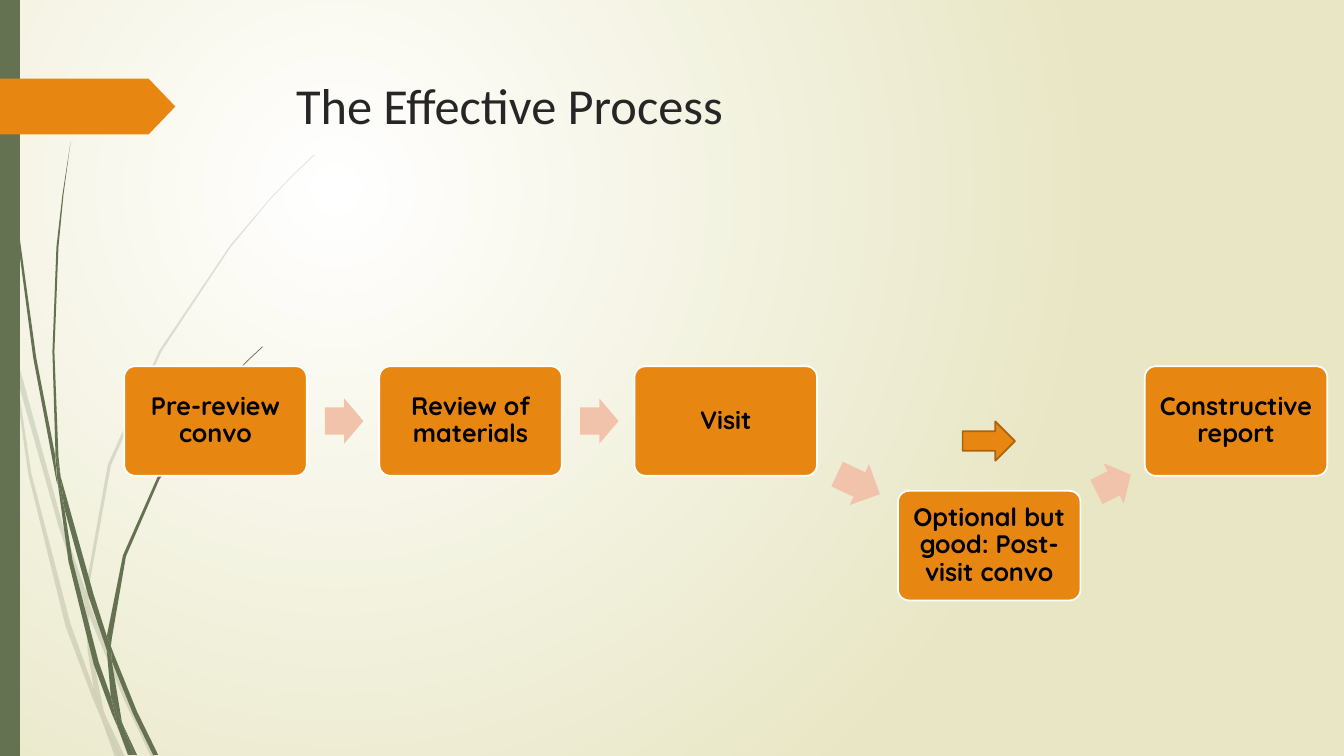
from lxml.etree import SubElement
from pptx import Presentation
from pptx.dml.color import RGBColor
from pptx.enum.shapes import MSO_SHAPE
from pptx.enum.text import MSO_ANCHOR, MSO_AUTO_SIZE, PP_ALIGN
from pptx.oxml.ns import qn
from pptx.util import Cm, Pt

ORANGE, PEACH, OLIVE, WHITE = "E78712", "F1C3AB", "647252", "FFFFFF"
GRASS_UNIT = Cm(2.54) / 100

FADED_BLADES = [
    [(11, 350), (9, 322), (0, 282), (0, 299), (10, 344)],
    [(58, 522), (84, 599), (85, 586), (62, 520), (14, 345), (17, 376)],
    [(92, 607), (88, 596), (88, 610), (123, 694), (150, 751), (155, 751), (127, 692)],
    [(119, 751), (124, 751), (105, 711)],
    [(93, 683), (70, 619), (31, 469), (17, 376), (11, 350), (28, 470), (65, 621),
     (92, 693), (101, 714), (99, 707)],
    [(84, 599), (87, 646), (93, 683), (96, 692), (105, 711), (103, 706), (91, 646),
     (88, 610), (88, 608)],
    [(88, 584), (110, 462), (160, 349), (229, 245), (268, 198), (290, 175), (312, 154),
     (312, 153), (289, 175), (268, 197), (228, 244), (158, 348), (107, 461), (85, 584),
     (85, 586), (88, 596)],
    [(101, 714), (114, 751), (119, 751)],
    [(88, 608), (88, 610), (88, 596), (85, 586), (84, 599)],
    [(96, 692), (93, 683), (99, 707), (101, 714), (119, 751), (105, 711)],
]
SOLID_BLADES = [
    [(7, 110), (17, 233), (33, 355), (56, 477), (57, 481), (55, 457), (55, 453),
     (36, 355), (19, 232), (8, 109), (5, 48), (4, 0), (3, 0), (4, 48)],
    [(88, 592), (106, 645), (106, 633), (106, 631), (93, 590), (60, 472), (64, 505)],
    [(113, 649), (110, 641), (111, 656), (132, 708), (152, 749), (157, 749), (136, 706)],
    [(110, 691), (98, 657), (72, 556), (64, 505), (57, 477), (68, 557), (93, 659),
     (111, 708), (117, 722), (116, 717)],
    [(60, 472), (58, 453), (54, 349), (58, 245), (63, 193), (70, 141), (62, 193),
     (56, 245), (52, 349), (55, 449)],
    [(133, 749), (136, 749), (122, 719)],
    [(57, 477), (64, 505), (60, 472), (55, 449), (55, 453)],
    [(111, 633), (125, 552), (158, 476), (205, 406), (231, 374), (245, 359), (261, 344),
     (260, 344), (245, 358), (231, 373), (204, 405), (156, 474), (122, 551), (106, 631),
     (110, 641)],
    [(117, 722), (127, 749), (131, 749)],
    [(106, 645), (110, 691), (116, 706), (122, 719), (121, 716), (111, 656), (109, 651)],
    [(106, 645), (109, 651), (111, 656), (110, 641), (106, 631), (106, 633)],
    [(116, 706), (110, 691), (116, 717), (117, 722), (130, 749), (133, 749), (122, 719)],
]


def color(hex_code):
    """Turn a hex string into a colour."""
    return RGBColor.from_string(hex_code)


def paint(shape, fill, line=None, opacity=None):
    """Give a shape its fill, outline and opacity, without a shadow."""
    shape.shadow.inherit = False
    shape.fill.solid()
    shape.fill.fore_color.rgb = color(fill)
    if line:
        shape.line.color.rgb = color(line)
        shape.line.width = Pt(1.25)
    else:
        shape.line.fill.background()
    if opacity:
        srgb = shape.element.spPr.find(".//" + qn("a:srgbClr"))
        SubElement(srgb, qn("a:alpha")).set("val", str(opacity * 1000))
    return shape


def preset(slide, kind, box, fill, line=None, adjustments=(), rotation=0):
    """Add a painted preset shape in a box given in centimetres."""
    shape = slide.shapes.add_shape(kind, *map(Cm, box))
    for index, value in enumerate(adjustments):
        shape.adjustments[index] = value
    shape.rotation = rotation
    return paint(shape, fill, line)


def write(shape, text, *, font, size, ink, bold=False, align=PP_ALIGN.LEFT,
          anchor=MSO_ANCHOR.TOP, spacing=1.0, inset=0.25):
    """Put formatted text into a shape."""
    frame = shape.text_frame
    frame.text = text
    frame.word_wrap = True
    frame.auto_size = MSO_AUTO_SIZE.NONE
    frame.vertical_anchor = anchor
    frame.margin_left = frame.margin_right = Cm(inset)
    frame.margin_top = frame.margin_bottom = Cm(0.13)
    paragraph = frame.paragraphs[0]
    paragraph.alignment = align
    paragraph.line_spacing = spacing
    run_font = paragraph.runs[0].font
    run_font.name, run_font.size, run_font.bold = font, Pt(size), bold
    run_font.color.rgb = color(ink)


def draw_blades(slide, blades, opacity=None):
    """Draw grass blades from outlines given in grass units."""
    for start, *others in blades:
        builder = slide.shapes.build_freeform(*start, scale=GRASS_UNIT)
        builder.add_line_segments(others, close=True)
        paint(builder.convert_to_shape(), OLIVE, opacity=opacity)


def draw_backdrop(slide):
    """Draw the radial background, the grass, the side bar and the flag."""
    fill = slide.background.fill
    fill.gradient()
    for stop, shade in zip(fill.gradient_stops, (WHITE, "E8E6C4")):
        stop.color.rgb = color(shade)
    gradient = slide.element.find(".//" + qn("a:gradFill"))
    gradient.remove(gradient.find(qn("a:lin")))
    radial = SubElement(gradient, qn("a:path"), {"path": "circle"})
    SubElement(radial, qn("a:fillToRect"),
               {"l": "50000", "t": "50000", "r": "100000", "b": "100000"})
    draw_blades(slide, FADED_BLADES, opacity=20)
    draw_blades(slide, SOLID_BLADES)
    preset(slide, MSO_SHAPE.RECTANGLE, (0, 0, 0.5, 19.05), OLIVE)
    preset(slide, MSO_SHAPE.PENTAGON, (0, 1.98, 4.42, 1.41), ORANGE, adjustments=[0.48])


def draw_title(slide, box):
    """Place the title in its box."""
    title = slide.shapes.title
    title.left, title.top, title.width, title.height = map(Cm, box)
    write(title, "The Effective Process", font="Calibri", size=36, ink="262626")


def draw_step(slide, label, box):
    """Draw one step of the process."""
    step = preset(slide, MSO_SHAPE.ROUNDED_RECTANGLE, box, ORANGE, WHITE, [0.1])
    write(step, label, font="Quicksand", size=18, ink="000000", bold=True,
          align=PP_ALIGN.CENTER, anchor=MSO_ANCHOR.MIDDLE, spacing=0.9)


def draw_process(slide, left, top):
    """Draw the steps and the arrows between them from a top left corner."""
    width, height, pitch = 4.6, 2.76, 6.43
    arrow_width, arrow_height = 0.97, 1.14
    main_steps = {0: "Pre-review convo", 1: "Review of materials",
                  2: "Visit", 4: "Constructive report"}
    for column, label in main_steps.items():
        draw_step(slide, label, (left + column * pitch, top, width, height))
    draw_step(slide, "Optional but good: Post-visit convo",
              (left + 19.5, top + 3.14, width, height))

    level = (height - arrow_height) / 2
    arrows = [(width + 0.46, level, arrow_width, 0),
              (pitch + width + 0.46, level, arrow_width, 0),
              (17.91, 2.4, 1.19, 25.3),
              (24.45, 2.38, arrow_width, 333.3)]
    for across, down, length, rotation in arrows:
        preset(slide, MSO_SHAPE.RIGHT_ARROW,
               (left + across, top + down, length, arrow_height),
               PEACH, adjustments=[0.6, 0.5], rotation=rotation)
    preset(slide, MSO_SHAPE.RIGHT_ARROW, (left + 21.13, top + 1.39, 1.32, 0.99),
           ORANGE, "AB640D")


def main():
    """Build and save the presentation."""
    deck = Presentation()
    deck.slide_width, deck.slide_height = Cm(33.87), Cm(19.05)
    slide = deck.slides.add_slide(deck.slide_layouts[5])
    draw_backdrop(slide)
    draw_title(slide, (7.21, 1.73, 24.77, 3.56))
    draw_process(slide, 3.13, 9.23)
    deck.save("out.pptx")


if __name__ == "__main__":
    main()
